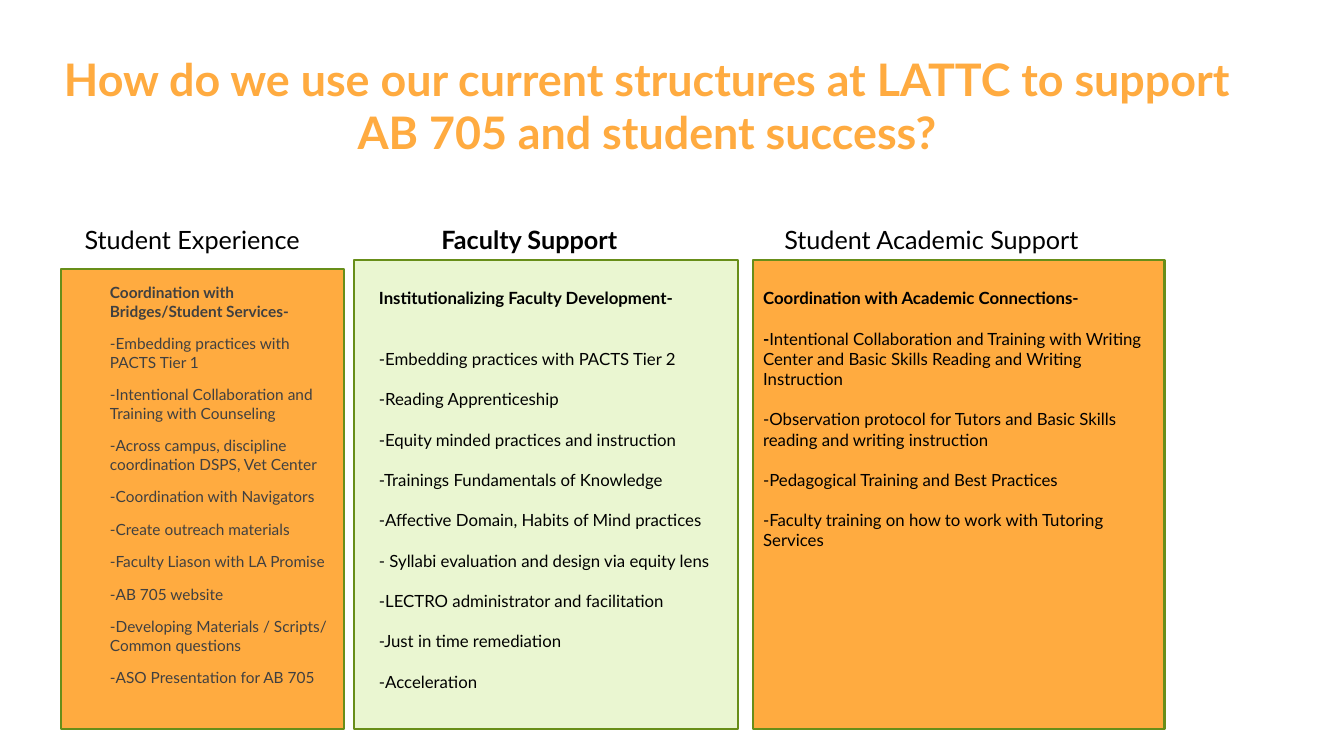
from lxml.etree import SubElement
from pptx import Presentation
from pptx.dml.color import RGBColor
from pptx.enum.shapes import MSO_SHAPE
from pptx.enum.text import MSO_ANCHOR, MSO_AUTO_SIZE, PP_ALIGN
from pptx.oxml.ns import qn
from pptx.util import Inches, Pt

COLORS = {
    "orange": "FFAB40",
    "pale_green": "EAF6D1",
    "green": "688E19",
    "gray": "404040",
    "black": "000000",
}
FONT = "Lato"
TITLE = "How do we use our current structures at LATTC to support AB 705 and student success?"
PANELS = [
    ((0.61, 2.67, 2.8, 4.56), "orange"),
    ((3.51, 2.58, 3.81, 4.65), "pale_green"),
    ((7.47, 2.58, 4.08, 4.65), "orange"),
]
HEADINGS = [
    ("Student Experience", (0.74, 2.18, 2.4, 0.49), False),
    ("Faculty Support", (4.28, 2.18, 2.06, 0.4), True),
    ("Student Academic Support", (7.68, 2.18, 3.18, 0.4), False),
]
STUDENT_ITEMS = [
    "Coordination with Bridges/Student Services-",
    "-Embedding practices with PACTS Tier 1",
    "-Intentional Collaboration and Training with Counseling",
    "-Across campus, discipline coordination DSPS, Vet Center",
    "-Coordination with Navigators",
    "-Create outreach materials",
    "-Faculty Liason with LA Promise",
    "-AB 705 website",
    "-Developing Materials / Scripts/ Common questions",
    "-ASO Presentation for AB 705",
]
FACULTY_ITEMS = [
    "Institutionalizing Faculty Development-",
    "-Embedding practices with PACTS Tier 2",
    "-Reading Apprenticeship",
    "-Equity minded practices and instruction",
    "-Trainings Fundamentals of Knowledge",
    "-Affective Domain, Habits of Mind practices",
    "- Syllabi evaluation and design via equity lens",
    "-LECTRO administrator and facilitation",
    "-Just in time remediation",
    "-Acceleration",
]
ACADEMIC_ITEMS = [
    "Coordination with Academic Connections-",
    "-Intentional Collaboration and Training with Writing Center "
    "and Basic Skills Reading and Writing Instruction",
    "-Observation protocol for Tutors and Basic Skills reading and writing instruction",
    "-Pedagogical Training and Best Practices",
    "-Faculty training on how to work with Tutoring Services",
]


def color(name):
    return RGBColor.from_string(COLORS[name])


def set_attributes(target, values):
    for name, value in values.items():
        setattr(target, name, value)


def place(shape, box):
    set_attributes(shape, dict(zip(("left", "top", "width", "height"), map(Inches, box))))


def prepare_frame(shape, top_inset=0.05):
    frame = shape.text_frame
    set_attributes(frame, {
        "word_wrap": True,
        "auto_size": MSO_AUTO_SIZE.NONE,
        "vertical_anchor": MSO_ANCHOR.TOP,
        "margin_left": Inches(0.1),
        "margin_right": Inches(0.1),
        "margin_top": Inches(top_inset),
        "margin_bottom": Inches(0.05),
    })
    return frame


def add_run(paragraph, text, size, color_name, bold=False):
    run = paragraph.add_run()
    run.text = text
    set_attributes(run.font, {"name": FONT, "size": Pt(size), "bold": bold})
    run.font.color.rgb = color(color_name)


def add_panel(slide, box, fill):
    panel = slide.shapes.add_shape(MSO_SHAPE.RECTANGLE, *map(Inches, box))
    panel.shadow.inherit = False
    panel.fill.solid()
    panel.fill.fore_color.rgb = color(fill)
    panel.line.color.rgb = color("green")
    panel.line.width = Pt(1.5)
    slide.shapes.title.element.addprevious(panel.element)


def add_text_box(slide, box):
    return prepare_frame(slide.shapes.add_textbox(*map(Inches, box)))


def fill_list(frame, items, size, color_name, gap):
    for index, item in enumerate(items):
        paragraph = frame.paragraphs[0] if index == 0 else frame.add_paragraph()
        paragraph.space_before = Pt(gap if index else 0)
        add_run(paragraph, item, size, color_name, bold=index == 0)


def fill_title(slide):
    title = slide.shapes.title
    place(title, (0.23, 0.46, 12.38, 1.77))
    paragraph = prepare_frame(title).paragraphs[0]
    paragraph.alignment = PP_ALIGN.CENTER
    add_run(paragraph, TITLE, 32, "orange", bold=True)


def fill_student_body(slide):
    body = slide.placeholders[1]
    place(body, (0.61, 2.58, 2.8, 4.65))
    frame = prepare_frame(body, top_inset=0.23)
    fill_list(frame, STUDENT_ITEMS, 11, "gray", 10)
    for paragraph in frame.paragraphs:
        properties = paragraph._p.get_or_add_pPr()
        properties.set("marL", str(Inches(0.38)))
        properties.set("indent", "0")
        SubElement(properties, qn("a:buNone"))


def main():
    presentation = Presentation()
    presentation.slide_width = Inches(13.33)
    presentation.slide_height = Inches(7.5)
    slide = presentation.slides.add_slide(presentation.slide_layouts[1])
    for box, fill in PANELS:
        add_panel(slide, box, fill)
    fill_title(slide)
    fill_student_body(slide)

    faculty = add_text_box(slide, (3.66, 2.81, 3.81, 4.42))
    fill_list(faculty, FACULTY_ITEMS, 12, "black", 14.4)
    faculty.paragraphs[1].space_before = Pt(28.8)

    academic = add_text_box(slide, (7.47, 2.81, 4.08, 3.69))
    fill_list(academic, ACADEMIC_ITEMS, 12, "black", 14.4)
    collaboration = academic.paragraphs[1]
    collaboration.clear()
    add_run(collaboration, "-", 12, "black", bold=True)
    add_run(collaboration, ACADEMIC_ITEMS[1][1:], 12, "black")

    for text, box, bold in HEADINGS:
        add_run(add_text_box(slide, box).paragraphs[0], text, 18, "black", bold)
    presentation.save("out.pptx")


if __name__ == "__main__":
    main()
